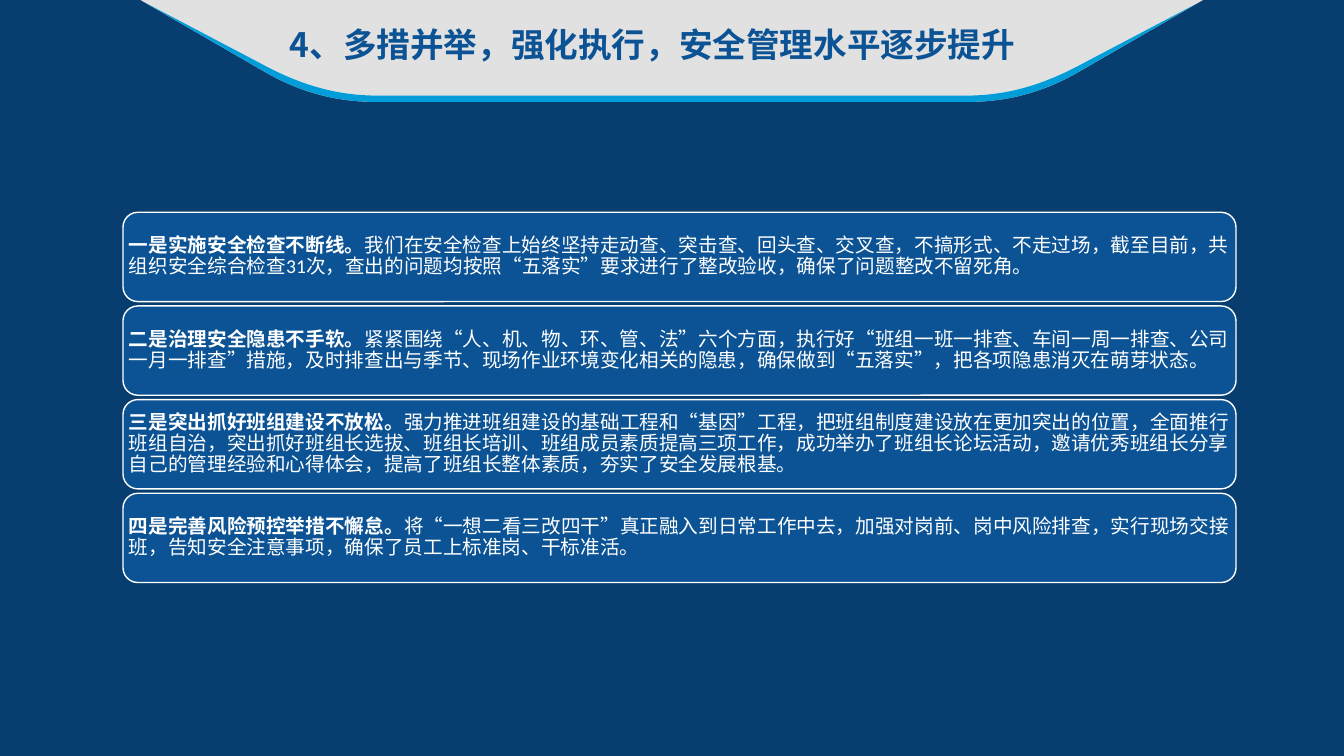
from lxml import etree
from pptx import Presentation
from pptx import util as u
from pptx.dml.color import RGBColor
from pptx.enum import shapes, text
from pptx.oxml.ns import qn

COLORS = {
    "background": "083E6F",
    "banner": "E1E1E1",
    "edge": "009DD9",
    "blue": "0B5394",
    "white": "FFFFFF",
}
CJK_FONT = "Noto Sans CJK SC"
CENTER_X = 16.93

# Bends as four Bezier points: distance from the centre line, distance from the top (cm)
OUTER_BEND = [(10.36, 1.75), (9.42, 2.31), (8.5, 2.57), (7.42, 2.57)]
INNER_BEND = [(10.36, 1.6), (9.42, 2.11), (8.5, 2.41), (7.42, 2.41)]
LEFT, RIGHT = -1, 1

MEASURES = [
    ("一是实施安全检查不断线。",
     "我们在安全检查上始终坚持走动查、突击查、回头查、交叉查，不搞形式、不走过场，截至目前，"
     "共组织安全综合检查31次，查出的问题均按照“五落实”要求进行了整改验收，确保了问题整改不留死角。"),
    ("二是治理安全隐患不手软。",
     "紧紧围绕“人、机、物、环、管、法”六个方面，执行好“班组一班一排查、车间一周一排查、"
     "公司一月一排查”措施，及时排查出与季节、现场作业环境变化相关的隐患，确保做到“五落实”，"
     "把各项隐患消灭在萌芽状态。"),
    ("三是突出抓好班组建设不放松。",
     "强力推进班组建设的基础工程和“基因”工程，把班组制度建设放在更加突出的位置，全面推行班组自治，"
     "突出抓好班组长选拔、班组长培训、班组成员素质提高三项工作，成功举办了班组长论坛活动，"
     "邀请优秀班组长分享自己的管理经验和心得体会，提高了班组长整体素质，夯实了安全发展根基。"),
    ("四是完善风险预控举措不懈怠。",
     "将“一想二看三改四干”真正融入到日常工作中去，加强对岗前、岗中风险排查，实行现场交接班，"
     "告知安全注意事项，确保了员工上标准岗、干标准活。"),
]


def color(name):
    return RGBColor.from_string(COLORS[name])


def on_side(points, side):
    return [(CENTER_X + side * x, y) for x, y in points]


def profile(bend, side):
    """Segments of both bends, from the given side to the other one."""
    near, far = on_side(bend, side), on_side(bend[::-1], -side)
    return [near[:1], near[1:], far[:1], far[1:]]


def add_outline(s, segments, fill):
    """Draw segments of one point (line) or three points (Bezier curve)."""
    start, *rest = [(u.Cm(x), u.Cm(y)) for seg in segments for x, y in seg]
    builder = s.shapes.build_freeform(*start, scale=1.0)
    builder.add_line_segments(rest, close=True)
    sp = builder.convert_to_shape()
    lines = iter(list(sp._element.iter(qn("a:lnTo"))))
    for seg in segments[1:]:
        first, *others = [next(lines) for _ in seg]
        if others:
            first.tag = qn("a:cubicBezTo")
            for line in others:
                first.append(line[0])
                line.getparent().remove(line)
    sp.shadow.inherit = False
    sp.fill.solid()
    sp.fill.fore_color.rgb = color(fill)
    sp.line.fill.background()


def add_run(p, words, font, size, fill, bold):
    r = p.add_run()
    r.text = words
    r.font.name = font
    r.font.size = u.Pt(size)
    r.font.bold = bold
    r.font.color.rgb = color(fill)
    etree.SubElement(r.font._element, qn("a:ea"), typeface=CJK_FONT)


def add_banner(s):
    corner, tip = [(13.39, 0)], [(13.25, 0.08)]
    lower = profile(OUTER_BEND, LEFT)
    upper = profile(INNER_BEND, RIGHT)
    add_outline(s, [on_side(corner, LEFT), *lower, on_side(corner, RIGHT)], "banner")
    add_outline(s, [on_side(tip, LEFT), *lower, on_side(tip, RIGHT), *upper], "edge")


def add_title(s, words):
    sp = s.shapes.add_textbox(u.Cm(7.05), u.Cm(0.48), u.Cm(20.14), u.Cm(1.27))
    tf = sp.text_frame
    tf.word_wrap = True
    add_run(tf.paragraphs[0], words, CJK_FONT, 24, "blue", True)


def add_measure(group, top, heading, body):
    box = u.Cm(3.1), u.Cm(top), u.Cm(28.05), u.Cm(2.25)
    sp = group.shapes.add_shape(shapes.MSO_SHAPE.ROUNDED_RECTANGLE, *box)
    sp.shadow.inherit = False
    sp.fill.solid()
    sp.fill.fore_color.rgb = color("blue")
    sp.line.color.rgb = color("white")
    sp.line.width = u.Pt(1)
    tf = group.shapes.add_textbox(*box).text_frame
    tf.word_wrap = True
    tf.vertical_anchor = text.MSO_ANCHOR.MIDDLE
    tf.margin_left = tf.margin_right = tf.margin_top = tf.margin_bottom = u.Cm(0.15)
    p = tf.paragraphs[0]
    p.line_spacing = 0.9
    p.space_after = u.Pt(5)
    add_run(p, heading, "Calibri", 14, "white", True)
    add_run(p, body, "Calibri", 14, "white", False)


def main():
    prs = Presentation()
    prs.slide_width, prs.slide_height = u.Cm(33.87), u.Cm(19.05)
    s = prs.slides.add_slide(prs.slide_layouts[6])
    s.background.fill.solid()
    s.background.fill.fore_color.rgb = color("background")
    add_banner(s)
    add_title(s, "4、多措并举，强化执行，安全管理水平逐步提升")
    group = s.shapes.add_group_shape()
    for i, (heading, body) in enumerate(MEASURES):
        add_measure(group, 5.35 + 2.36 * i, heading, body)
    prs.save("out.pptx")


if __name__ == "__main__":
    main()
